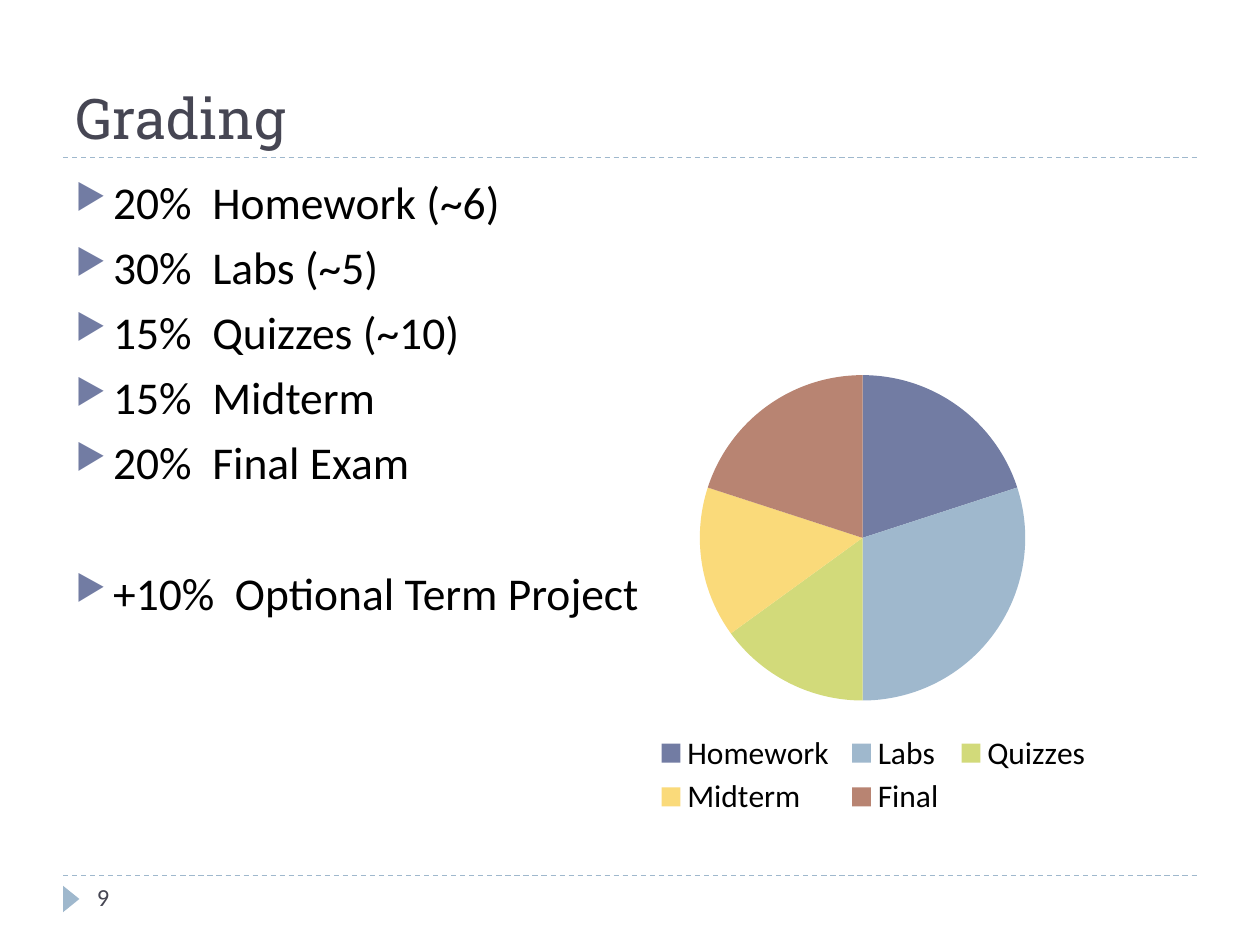
from dataclasses import dataclass

from lxml import etree
from pptx import Presentation
from pptx.chart.data import CategoryChartData
from pptx.dml.color import RGBColor
from pptx.enum.chart import XL_CHART_TYPE, XL_LEGEND_POSITION
from pptx.enum.dml import MSO_LINE
from pptx.enum.shapes import MSO_CONNECTOR, MSO_SHAPE
from pptx.enum.text import MSO_ANCHOR, PP_ALIGN
from pptx.oxml.ns import qn
from pptx.util import Inches, Pt


@dataclass(frozen=True)
class Theme:
    heading_font: str = "Roboto Slab"
    body_font: str = "Calibri"
    title_size: int = 32
    body_size: int = 26
    legend_size: int = 18
    number_size: int = 14
    ink: str = "000000"
    heading: str = "464653"
    bullet: str = "727CA3"
    rule: str = "9FB8CD"
    slices: tuple = ("727CA3", "9FB8CD", "D2DA7A", "FADA7A", "B88472")


THEME = Theme()
ITEMS = ("20%  Homework (~6)", "30%  Labs (~5)", "15%  Quizzes (~10)",
         "15%  Midterm", "20%  Final Exam")
EXTRA = "+10%  Optional Term Project"
WEIGHTS = {"Homework": 20, "Labs": 30, "Quizzes": 15, "Midterm": 15, "Final": 20}


def rgb(value):
    return RGBColor.from_string(value)


def style_font(font, name, size, color):
    font.name = name
    font.size = Pt(size)
    font.color.rgb = rgb(color)


def add_run(p, text, name, size, color):
    r = p.add_run()
    r.text = text
    style_font(r.font, name, size, color)


def set_title(s, text):
    sp = s.shapes.title
    sp.left, sp.top, sp.width, sp.height = map(Inches, (0.5, 0.17, 9, 1.08))
    tf = sp.text_frame
    tf.vertical_anchor = MSO_ANCHOR.BOTTOM
    p = tf.paragraphs[0]
    p.alignment = PP_ALIGN.LEFT
    add_run(p, text, THEME.heading_font, THEME.title_size, THEME.heading)


def add_rule(s, y):
    line = s.shapes.add_connector(MSO_CONNECTOR.STRAIGHT, Inches(0.5), Inches(y),
                                  Inches(9.5), Inches(y))
    line.line.color.rgb = rgb(THEME.rule)
    line.line.width = Pt(0.75)
    line.line.dash_style = MSO_LINE.DASH
    etree.SubElement(line._element.spPr, qn("a:effectLst"))


def add_marker(s):
    sp = s.shapes.add_shape(MSO_SHAPE.ISOSCELES_TRIANGLE, Inches(0.46), Inches(7.07),
                            Inches(0.21), Inches(0.13))
    sp.rotation = 90
    sp.shadow.inherit = False
    sp.fill.solid()
    sp.fill.fore_color.rgb = rgb(THEME.rule)
    sp.line.fill.background()


def add_text_box(s, left, top, width, height):
    tf = s.shapes.add_textbox(Inches(left), Inches(top), Inches(width),
                              Inches(height)).text_frame
    tf.word_wrap = True
    return tf


def set_bullet(p):
    pPr = p._p.get_or_add_pPr()
    pPr.set("marL", str(Inches(0.3)))
    pPr.set("indent", str(Inches(-0.3)))
    color = etree.SubElement(pPr, qn("a:buClr"))
    etree.SubElement(color, qn("a:srgbClr"), val=THEME.bullet)
    etree.SubElement(pPr, qn("a:buSzPct"), val="76000")
    etree.SubElement(pPr, qn("a:buChar"), char="▶")


def add_bullets(s):
    tf = add_text_box(s, 0.5, 1.33, 9, 5.4)
    for i, text in enumerate((*ITEMS, EXTRA)):
        p = tf.add_paragraph() if i else tf.paragraphs[0]
        # The optional item stands one line apart
        p.space_before = Pt(43.5 if text == EXTRA else 6)
        set_bullet(p)
        add_run(p, text, THEME.body_font, THEME.body_size, THEME.ink)


def set_layout(parent, index, x, y, w, h, inner=False):
    """Place a chart part by fractions of the chart area."""
    old = parent.find(qn("c:layout"))
    if old is not None:
        parent.remove(old)
    layout = etree.Element(qn("c:layout"))
    manual = etree.SubElement(layout, qn("c:manualLayout"))
    if inner:
        etree.SubElement(manual, qn("c:layoutTarget"), val="inner")
    for tag in ("xMode", "yMode"):
        etree.SubElement(manual, qn(f"c:{tag}"), val="edge")
    for tag, value in zip("xywh", (x, y, w, h)):
        etree.SubElement(manual, qn(f"c:{tag}"), val=str(value))
    parent.insert(index, layout)


def add_pie(s):
    data = CategoryChartData()
    data.categories = list(WEIGHTS)
    data.add_series("Series 1", list(WEIGHTS.values()))
    chart = s.shapes.add_chart(XL_CHART_TYPE.PIE, Inches(4), Inches(2.83),
                               Inches(5.75), Inches(3.69), data).chart
    style_font(chart.font, THEME.body_font, THEME.legend_size, THEME.ink)
    chart.has_title = False
    chart.has_legend = True
    chart.legend.position = XL_LEGEND_POSITION.BOTTOM
    chart.legend.include_in_layout = False
    plot = chart.plots[0]
    plot.vary_by_categories = True
    for i, color in enumerate(THEME.slices):
        fill = plot.series[0].points[i].format.fill
        fill.solid()
        fill.fore_color.rgb = rgb(color)
    plot_area = chart._chartSpace.chart.plotArea
    set_layout(plot_area, 0, 0.27, 0.04, 0.45, 0.7, inner=True)
    set_layout(chart.legend._element, 1, 0.2, 0.8, 0.62, 0.2)


def main():
    prs = Presentation()
    prs.slide_width, prs.slide_height = Inches(10), Inches(7.5)
    s = prs.slides.add_slide(prs.slide_layouts[5])

    # Frame
    for y in (6.95, 1.25):
        add_rule(s, y)
    add_marker(s)

    # Content
    set_title(s, "Grading")
    add_bullets(s)
    add_pie(s)

    # Slide number
    tf = add_text_box(s, 0.67, 6.95, 2.17, 0.4)
    add_run(tf.paragraphs[0], "9", THEME.body_font, THEME.number_size, THEME.heading)

    prs.save("out.pptx")


if __name__ == "__main__":
    main()
